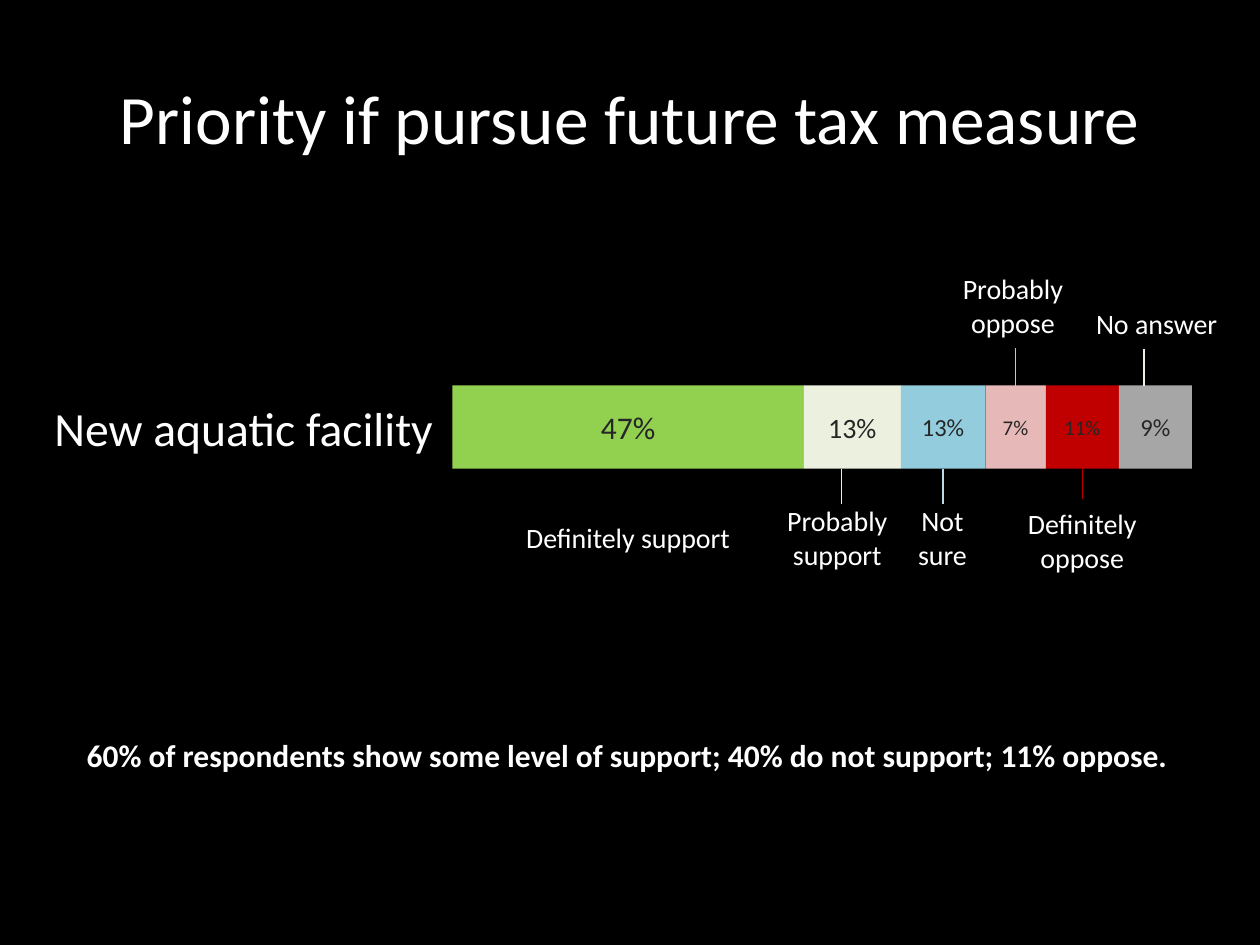
from lxml import etree
from pptx import Presentation
from pptx.dml.color import RGBColor
from pptx.enum.shapes import MSO_CONNECTOR, MSO_SHAPE
from pptx.enum.text import MSO_ANCHOR, PP_ALIGN
from pptx.oxml.ns import qn
from pptx.util import Inches, Pt

RECTANGLE = MSO_SHAPE.RECTANGLE
STRAIGHT = MSO_CONNECTOR.STRAIGHT
MIDDLE = MSO_ANCHOR.MIDDLE
CENTER = PP_ALIGN.CENTER
TOP_SIDE, BOTTOM_SIDE = 0, 2

COLORS = {
    "black": "000000", "white": "FFFFFF", "ink": "262626",
    "green": "92D050", "cream": "EBF1DE", "blue": "93CDDD",
    "light blue": "B7DEE8", "pink": "E6B9B8", "red": "C00000", "gray": "A6A6A6",
}


def color(name):
    return RGBColor.from_string(COLORS[name])


def write(shape, text, size, ink="white", bold=False):
    """Put centred text into a shape or text box."""
    frame = shape.text_frame
    frame.word_wrap = True
    frame.vertical_anchor = MIDDLE
    frame.text = text
    para = frame.paragraphs[0]
    para.alignment = CENTER
    for span in para.runs:
        span.font.name = "Calibri"
        span.font.size = Pt(size)
        span.font.bold = bold
        span.font.color.rgb = color(ink)


deck = Presentation()
deck.slide_width, deck.slide_height = Inches(10), Inches(7.5)
page = deck.slides.add_slide(deck.slide_layouts[6])
page.background.fill.solid()
page.background.fill.fore_color.rgb = color("black")

# Stacked bar: segments follow one another from left to right
BAR_LEFT, BAR_TOP, BAR_HEIGHT = 3.59, 3.06, 0.66
segments = [  # answer, share, width, text size, fill
    ("Definitely support", "47%", 2.79, 18, "green"),
    ("Probably support", "13%", 0.77, 16, "cream"),
    ("Not sure", "13%", 0.67, 14, "blue"),
    ("Probably oppose", "7%", 0.48, 12, "pink"),
    ("Definitely oppose", "11%", 0.58, 12, "red"),
    ("No answer", "9%", 0.58, 14, "gray"),
]
bars = {}
left = BAR_LEFT
for answer, share, width, size, fill in segments:
    bar = page.shapes.add_shape(RECTANGLE, Inches(left), Inches(BAR_TOP),
                                Inches(width), Inches(BAR_HEIGHT))
    bar.shadow.inherit = False
    bar.fill.solid()
    bar.fill.fore_color.rgb = color(fill)
    bar.line.fill.background()
    bar.text_frame.margin_left = bar.text_frame.margin_right = 0
    write(bar, share, size, "ink")
    bars[answer] = bar
    left += width

# Title, row name, answer labels and conclusion
texts = [  # text, left, top, width, height, size, bold
    ("Priority if pursue future tax measure", 0.5, 0.3, 9, 1.25, 39.6, False),
    ("New aquatic facility", 0.33, 3, 3.21, 0.79, 27.2, False),
    ("Definitely support", 3.82, 3.92, 2.33, 0.69, 16, False),
    ("Probably\vsupport", 5.97, 3.92, 1.35, 0.69, 16, False),
    ("Not sure", 7.03, 3.92, 0.9, 0.69, 16, False),
    ("Probably oppose", 7.31, 2.08, 1.46, 0.69, 16, False),
    ("Definitely oppose", 7.96, 3.96, 1.26, 0.66, 16, False),
    ("No answer", 8.55, 2.24, 1.26, 0.66, 16, False),
    ("60% of respondents show some level of support; 40% do not support; 11% oppose.",
     -0.02, 5.79, 10, 0.4, 18, True),
]
for text, left, top, width, height, size, bold in texts:
    box = page.shapes.add_textbox(Inches(left), Inches(top), Inches(width), Inches(height))
    write(box, text, size, bold=bold)

# Leader lines between segments and labels
leaders = [  # x, bar end, label end, colour, answer and side where joined at the middle
    (6.68, 3.72, 4, "cream", None, None),
    (7.49, 3.72, 4, "light blue", "Not sure", BOTTOM_SIDE),
    (8.06, 3.06, 2.76, "pink", "Probably oppose", TOP_SIDE),
    (8.59, 3.72, 3.96, "red", "Definitely oppose", BOTTOM_SIDE),
    (9.08, 3.06, 2.77, "cream", None, None),
]
for x, bar_end, label_end, line_color, answer, side in leaders:
    leader = page.shapes.add_connector(STRAIGHT, Inches(x), Inches(bar_end),
                                       Inches(x), Inches(label_end))
    if answer:
        leader.begin_connect(bars[answer], side)
        leader.end_x = leader.begin_x
    leader.line.color.rgb = color(line_color)
    leader.line.width = Pt(0.75)
    etree.SubElement(leader._element.spPr, qn("a:effectLst"))

deck.save("out.pptx")
